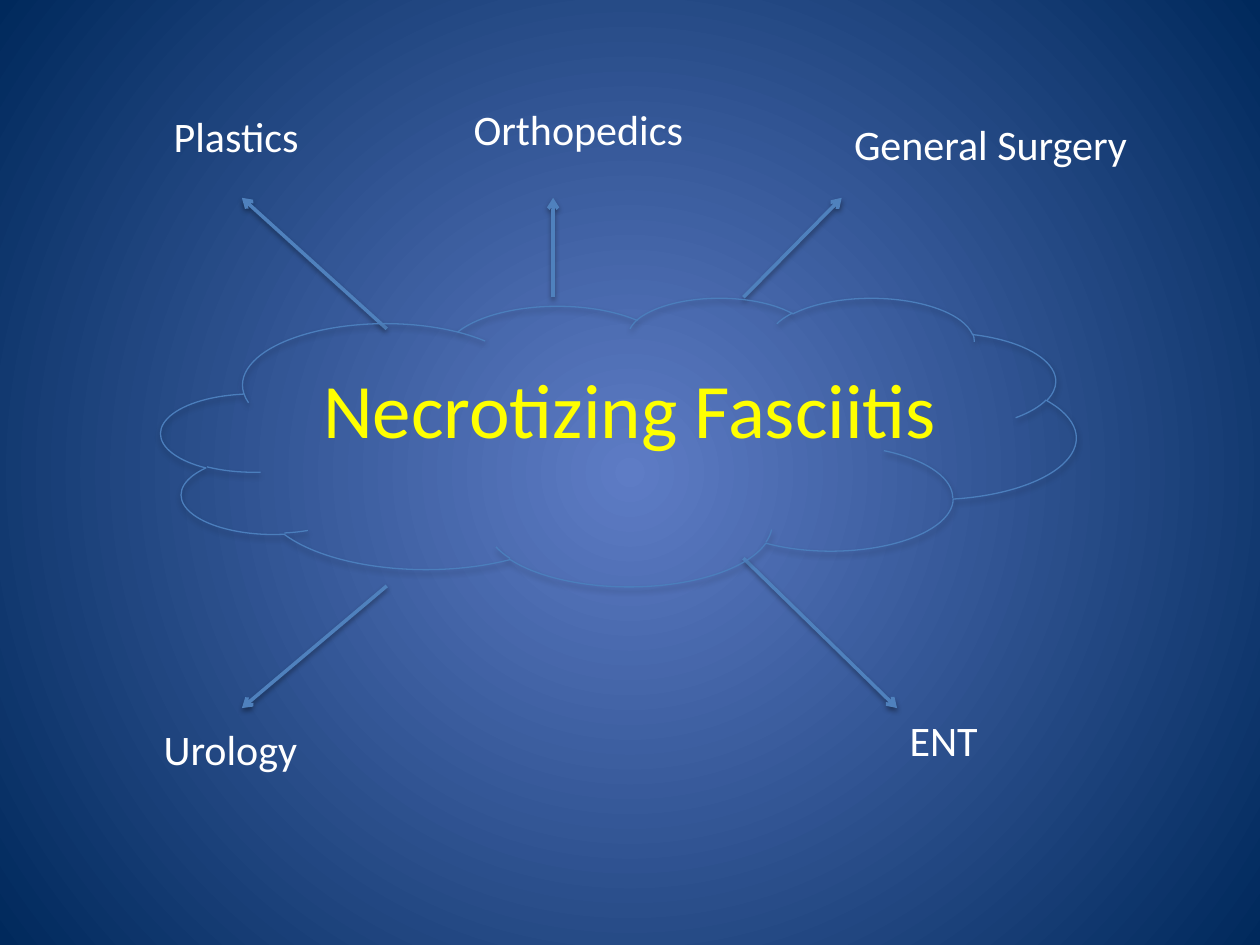
from dataclasses import dataclass

from lxml import etree
from pptx import Presentation
from pptx.dml.color import RGBColor
from pptx.enum.shapes import MSO_CONNECTOR, MSO_SHAPE
from pptx.enum.text import MSO_ANCHOR, MSO_AUTO_SIZE, PP_ALIGN
from pptx.oxml.ns import qn
from pptx.util import Inches, Pt

STRAIGHT = MSO_CONNECTOR.STRAIGHT
CLOUD = MSO_SHAPE.CLOUD
MIDDLE, TOP = MSO_ANCHOR.MIDDLE, MSO_ANCHOR.TOP
CENTER, LEFT = PP_ALIGN.CENTER, PP_ALIGN.LEFT
GROW = MSO_AUTO_SIZE.SHAPE_TO_FIT_TEXT
FIXED = MSO_AUTO_SIZE.NONE


@dataclass(frozen=True)
class Theme:
    """Colours, font and sizes of the slide."""
    font: str = "Calibri"
    glow: str = "5E7CC5"
    edge: str = "00295C"
    title: str = "FFFF00"
    label: str = "FFFFFF"
    arrow: str = "4F81BD"
    outline: str = "4B7EBC"
    title_size: float = 44
    label_size: float = 24
    arrow_width: float = 2
    outline_width: float = 0.75


THEME = Theme()
TITLE_FORMAT = {
    "frame": {"word_wrap": True, "auto_size": FIXED, "vertical_anchor": MIDDLE},
    "paragraph": {"alignment": CENTER},
    "font": {"name": THEME.font, "size": Pt(THEME.title_size)},
    "color": THEME.title,
}
LABEL_FORMAT = {
    "frame": {"word_wrap": False, "auto_size": GROW, "vertical_anchor": TOP},
    "paragraph": {"alignment": LEFT},
    "font": {"name": THEME.font, "size": Pt(THEME.label_size)},
    "color": THEME.label,
}
TITLE_BOX = (0.5, 2.61, 9, 1.25)
CLOUD_BOX = (1.28, 2.36, 7.26, 2.29)
SPECIALTIES = [
    ("Plastics", (1.28, 0.83, 1.21, 0.5), (3.07, 2.61), (1.92, 1.57)),
    ("Orthopedics", (3.66, 0.77, 1.88, 0.5), (4.39, 2.36), (4.39, 1.57)),
    ("General Surgery", (6.68, 0.89, 2.4, 0.5), (5.9, 2.36), (6.68, 1.57)),
    ("Urology", (1.2, 5.69, 1.28, 0.5), (3.07, 4.65), (1.92, 5.62)),
    ("ENT", (7.12, 5.62, 0.75, 0.5), (5.9, 4.43), (7.12, 5.62)),
]


def inches(values):
    """Turn plain numbers into lengths."""
    return [Inches(value) for value in values]


def apply(target, values):
    """Set each attribute named in values on the target."""
    for name, value in values.items():
        setattr(target, name, value)


def paint_background(slide):
    """Fill the slide with a radial gradient from its centre."""
    fill = slide.background.fill
    fill.gradient()
    for stop, color in zip(fill.gradient_stops, (THEME.glow, THEME.edge)):
        stop.color.rgb = RGBColor.from_string(color)
    gradient = slide.background._cSld.find(".//" + qn("a:gradFill"))
    gradient.remove(gradient.find(qn("a:lin")))
    radial = etree.SubElement(gradient, qn("a:path"), path="circle")
    sides = dict.fromkeys("ltrb", "50000")
    etree.SubElement(radial, qn("a:fillToRect"), **sides)


def style_line(line, color, width):
    """Give a line its colour and width."""
    line.color.rgb = RGBColor.from_string(color)
    line.width = Pt(width)


def add_shadow(shape, distance, opacity):
    """Cast a soft black shadow straight down."""
    effects = etree.SubElement(shape._element.spPr, qn("a:effectLst"))
    shadow = etree.SubElement(
        effects, qn("a:outerShdw"), blurRad=str(Pt(3.1)),
        dist=str(Pt(distance)), dir="5400000", rotWithShape="0")
    color = etree.SubElement(shadow, qn("a:srgbClr"), val="000000")
    etree.SubElement(color, qn("a:alpha"), val=str(opacity * 1000))


def add_text(slide, box, text, formats):
    """Place one line of text in the box."""
    frame = slide.shapes.add_textbox(*inches(box)).text_frame
    apply(frame, formats["frame"])
    paragraph = frame.paragraphs[0]
    apply(paragraph, formats["paragraph"])
    run = paragraph.add_run()
    run.text = text
    apply(run.font, formats["font"])
    run.font.color.rgb = RGBColor.from_string(formats["color"])


def add_arrow(slide, start, end):
    """Draw an arrow from start to end."""
    arrow = slide.shapes.add_connector(STRAIGHT, *inches(start + end))
    style_line(arrow.line, THEME.arrow, THEME.arrow_width)
    outline = arrow._element.spPr.find(qn("a:ln"))
    etree.SubElement(outline, qn("a:tailEnd"), type="arrow")
    add_shadow(arrow, 1.6, 38)


def add_cloud(slide, box):
    """Outline the cloud around the central topic."""
    cloud = slide.shapes.add_shape(CLOUD, *inches(box))
    cloud.fill.background()
    style_line(cloud.line, THEME.outline, THEME.outline_width)
    add_shadow(cloud, 1.8, 35)


def build_slide(presentation):
    """Build the map of specialties around the topic."""
    slide = presentation.slides.add_slide(presentation.slide_layouts[6])
    paint_background(slide)
    add_text(slide, TITLE_BOX, "Necrotizing Fasciitis", TITLE_FORMAT)
    for name, box, start, end in SPECIALTIES:
        add_arrow(slide, start, end)
        add_text(slide, box, name, LABEL_FORMAT)
    add_cloud(slide, CLOUD_BOX)


def main():
    """Create and save the presentation."""
    presentation = Presentation()
    apply(presentation, {"slide_width": Inches(10), "slide_height": Inches(7.5)})
    build_slide(presentation)
    presentation.save("out.pptx")


if __name__ == "__main__":
    main()
